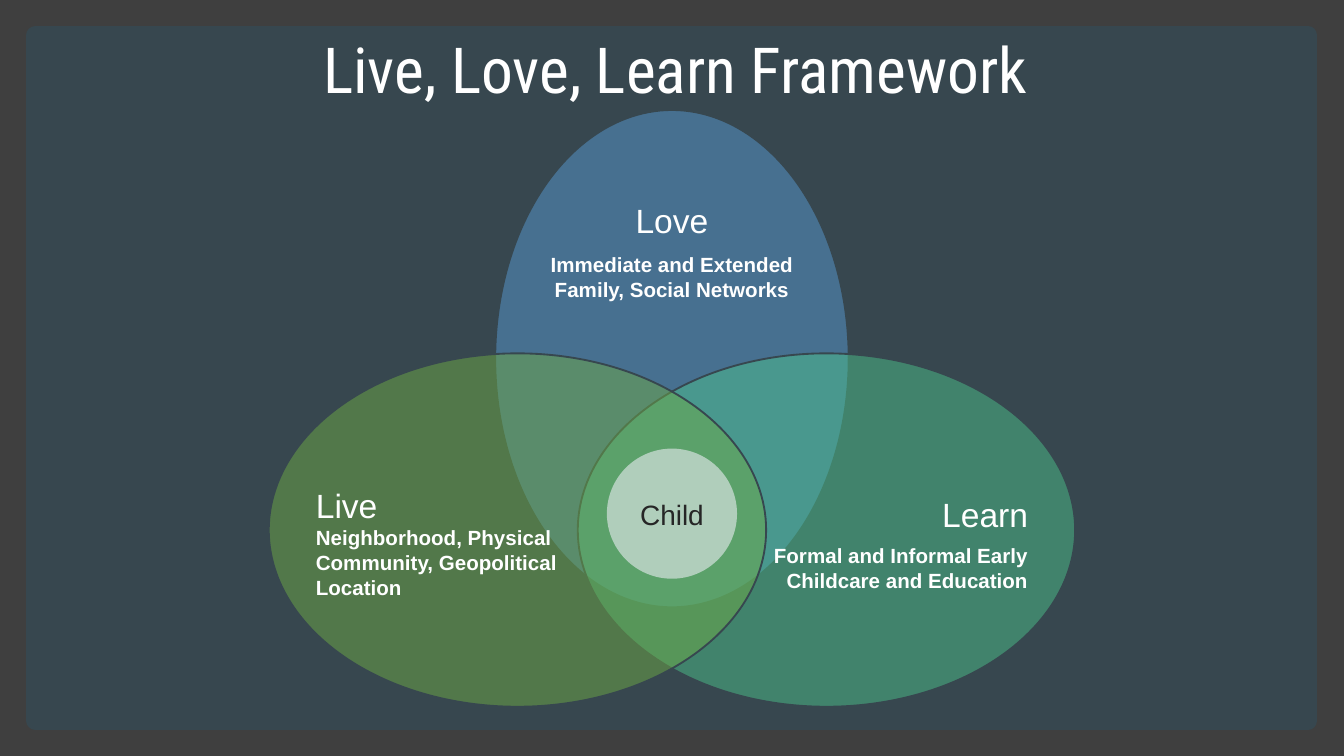
from dataclasses import dataclass

from lxml import etree
from pptx import Presentation
from pptx.dml.color import RGBColor
from pptx.enum.shapes import MSO_SHAPE
from pptx.enum.text import MSO_ANCHOR, MSO_AUTO_SIZE, PP_ALIGN
from pptx.oxml.ns import qn
from pptx.util import Cm, Pt

RECT, OVAL = MSO_SHAPE.RECTANGLE, MSO_SHAPE.OVAL
LEFT, MID, RIGHT = PP_ALIGN.LEFT, PP_ALIGN.CENTER, PP_ALIGN.RIGHT
MIDDLE = MSO_ANCHOR.MIDDLE
TITLE_ONLY = 5
WIDE, HIGH = 25.4, 14.29
LONG, SHORT = 9.4, 6.68

COLORS = {
    "frame": "3F3F3F",
    "panel": "37474F",
    "love": "599BD5",
    "learn": "4CC38C",
    "live": "6FAB46",
    "child": "E9EDF1",
    "white": "FFFFFF",
    "dark": "262626",
}


@dataclass
class Box:
    left: float
    top: float
    width: float
    height: float

    def lengths(self) -> tuple:
        return Cm(self.left), Cm(self.top), Cm(self.width), Cm(self.height)


@dataclass
class Circle:
    name: str
    text: str
    color: str
    oval: Box
    label: Box
    align: PP_ALIGN
    gap: float
    lead: float


CIRCLES = [
    Circle("Love", "Immediate and Extended Family, Social Networks", "love",
           Box((WIDE - SHORT) / 2, 2.08, SHORT, LONG),
           Box(10.25, 3.73, 4.9, 2.1), MID, 6, 0.9),
    Circle("Learn", "Formal and Informal Early Childcare and Education", "learn",
           Box(WIDE - 5.08 - LONG, 6.68, LONG, SHORT),
           Box(13.79, 8.43, 5.64, 3.68), RIGHT, 5, 1),
    Circle("Live", "Neighborhood, Physical Community, Geopolitical Location", "live",
           Box(5.08, 6.68, LONG, SHORT),
           Box(5.97, 8.41, 5.64, 3.68), LEFT, 0, 1),
]


def tint(key: str) -> RGBColor:
    return RGBColor.from_string(COLORS[key])


def add_form(slide, kind, box: Box, color: str, line: float = 0, alpha: int = 100):
    form = slide.shapes.add_shape(kind, *box.lengths())
    form.shadow.inherit = False
    form.fill.solid()
    form.fill.fore_color.rgb = tint(color)
    if alpha < 100:
        shade = form.fill._xPr.find(qn("a:solidFill"))[0]
        etree.SubElement(shade, qn("a:alpha")).set("val", str(alpha * 1000))
    if line:
        form.line.color.rgb = tint("panel")
        form.line.width = Pt(line)
    else:
        form.line.fill.background()
    return form


def style(para, size: float, color: str, align, face: str = "Arial", bold: bool = False) -> None:
    para.alignment = align
    font = para.font
    font.name, font.size, font.bold = face, Pt(size), bold
    font.color.rgb = tint(color)


def add_circle(slide, item: Circle) -> None:
    add_form(slide, OVAL, item.oval, item.color, 1, 49)
    frame = slide.shapes.add_textbox(*item.label.lengths()).text_frame
    frame.word_wrap = True
    frame.vertical_anchor = MIDDLE
    frame.margin_left = frame.margin_right = 0
    frame.margin_top = frame.margin_bottom = 0
    head, body = frame.paragraphs[0], frame.add_paragraph()
    head.text, body.text = item.name, item.text
    style(head, 18, "white", item.align)
    style(body, 11, "white", item.align, bold=True)
    head.line_spacing = item.lead
    body.space_before = Pt(item.gap)


def add_title(slide, text: str) -> None:
    title = slide.shapes.title
    title.left, title.top, title.width, title.height = Box(1.6, 0, 22.33, 2.77).lengths()
    title.element.getparent().append(title.element)
    frame = title.text_frame
    frame.text = text
    frame.auto_size = MSO_AUTO_SIZE.NONE
    frame.vertical_anchor = MIDDLE
    para = frame.paragraphs[0]
    style(para, 34, "white", MID, "Roboto Condensed")
    para.line_spacing = 0.9


def add_child(slide) -> None:
    size = 2.46
    child = add_form(slide, OVAL, Box((WIDE - size) / 2, 8.48, size, size), "child", alpha=60)
    frame = child.text_frame
    frame.text = "Child"
    frame.vertical_anchor = MIDDLE
    frame.margin_left = frame.margin_right = Cm(0.18)
    frame.margin_top = frame.margin_bottom = Cm(0.1)
    para = frame.paragraphs[0]
    style(para, 15, "dark", MID)
    para.line_spacing = 1.07


def main() -> None:
    deck = Presentation()
    deck.slide_width, deck.slide_height = Cm(WIDE), Cm(HIGH)
    slide = deck.slides.add_slide(deck.slide_layouts[TITLE_ONLY])
    back = slide.background.fill
    back.solid()
    back.fore_color.rgb = tint("panel")
    add_form(slide, RECT, Box(0, 0, WIDE, HIGH), "frame")
    add_form(slide, RECT, Box(0.67, 0.67, 24.05, 12.95), "panel", 10)
    add_title(slide, "Live, Love, Learn Framework")
    for item in CIRCLES:
        add_circle(slide, item)
    add_child(slide)
    deck.save("out.pptx")


if __name__ == "__main__":
    main()
